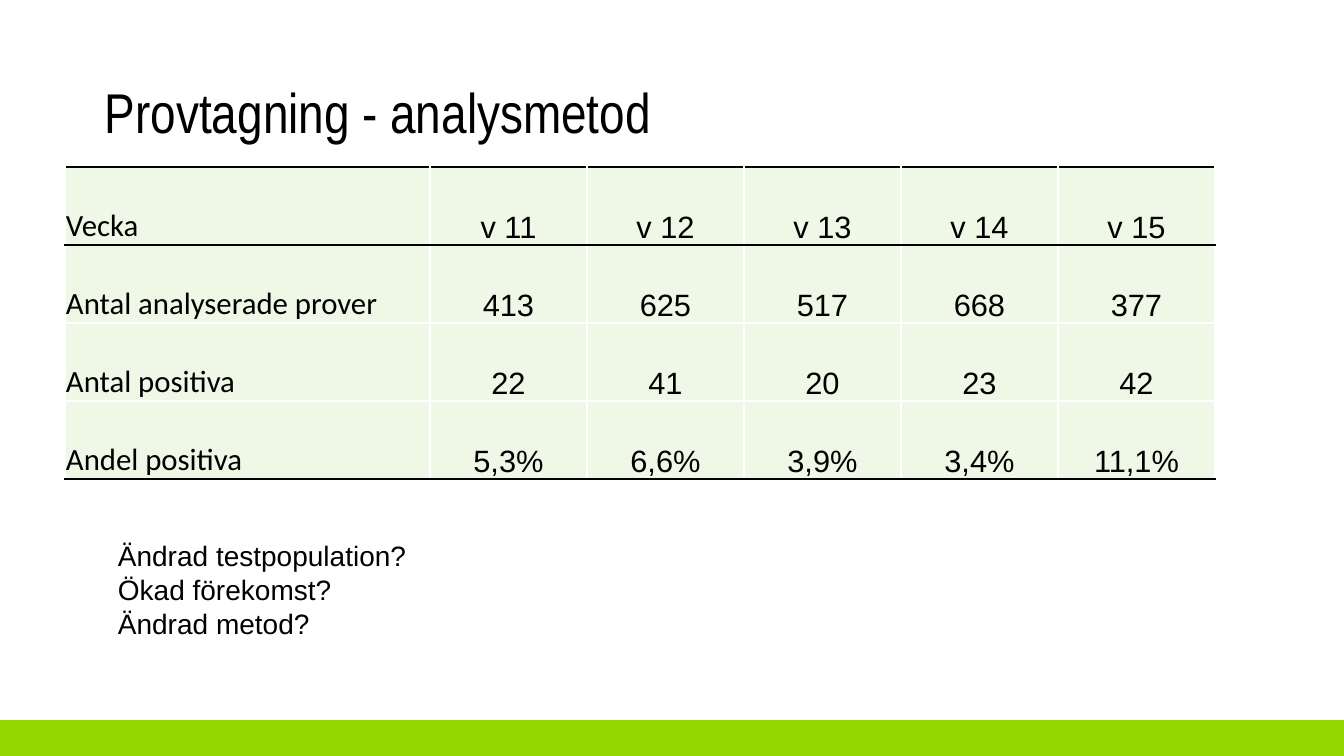
from dataclasses import dataclass

import pptx
import pptx.dml.color
import pptx.enum.shapes
import pptx.enum.text
import pptx.oxml
import pptx.oxml.ns
import pptx.util

PX_PER_INCH = 100.8
COLORS = {"text": "000000", "rule": "000000", "grid": "FFFFFF",
          "cell": "EFF8E7", "footer": "97D700"}
ALIGN = pptx.enum.text.PP_ALIGN
ANCHOR = pptx.enum.text.MSO_ANCHOR


@dataclass(frozen=True)
class Box:
    left: int
    top: int
    width: int
    height: int


@dataclass(frozen=True)
class Measure:
    label: str
    values: tuple[str, ...]
    top_line: str
    bottom_line: str


MEASURES = [
    Measure("Vecka", ("v 11", "v 12", "v 13", "v 14", "v 15"), "rule", "rule"),
    Measure("Antal analyserade prover", ("413", "625", "517", "668", "377"), "rule", "grid"),
    Measure("Antal positiva", ("22", "41", "20", "23", "42"), "grid", "grid"),
    Measure("Andel positiva", ("5,3%", "6,6%", "3,9%", "3,4%", "11,1%"), "grid", "rule"),
]
QUESTIONS = "Ändrad testpopulation?\nÖkad förekomst?\nÄndrad metod?"


def px(length: int) -> pptx.util.Emu:
    return pptx.util.Emu(round(length * 914400 / PX_PER_INCH))


def emu(box: Box) -> tuple:
    return px(box.left), px(box.top), px(box.width), px(box.height)


def rgb(name: str) -> pptx.dml.color.RGBColor:
    return pptx.dml.color.RGBColor.from_string(COLORS[name])


def write(frame, text: str, *, size: int, font: str = "Arial",
          align=ALIGN.LEFT, spacing: float = 1.0) -> None:
    frame.word_wrap = True
    for index, line in enumerate(text.split("\n")):
        paragraph = frame.add_paragraph() if index else frame.paragraphs[0]
        paragraph.alignment = align
        paragraph.line_spacing = spacing
        run = paragraph.add_run()
        run.text = line
        run.font.size = pptx.util.Pt(size)
        run.font.name = font
        run.font.color.rgb = rgb("text")


def add_text(slide, box: Box, text: str, **text_format) -> None:
    write(slide.shapes.add_textbox(*emu(box)).text_frame, text, **text_format)


def add_border(cell, side: str, color: str) -> None:
    cell._tc.get_or_add_tcPr().append(pptx.oxml.parse_xml(
        f'<a:ln{side} {pptx.oxml.ns.nsdecls("a")} w="12700"><a:solidFill>'
        f'<a:srgbClr val="{COLORS[color]}"/></a:solidFill></a:ln{side}>'))


def fill_cell(cell, text: str, measure: Measure, **text_format) -> None:
    # Borders come before the fill in the cell properties
    for side, color in (("L", "grid"), ("R", "grid"),
                        ("T", measure.top_line), ("B", measure.bottom_line)):
        add_border(cell, side, color)
    cell.fill.solid()
    cell.fill.fore_color.rgb = rgb("cell")
    cell.vertical_anchor = ANCHOR.BOTTOM
    cell.margin_left = cell.margin_right = cell.margin_top = px(1)
    cell.margin_bottom = 0
    write(cell.text_frame, text, size=22, **text_format)


def add_measures(slide, box: Box, label_width: int) -> None:
    weeks = len(MEASURES[0].values)
    table = slide.shapes.add_table(len(MEASURES), weeks + 1, *emu(box)).table
    table.first_row = table.horz_banding = False
    for index, column in enumerate(table.columns):
        column.width = px((box.width - label_width) // weeks if index else label_width)
    for row, measure in enumerate(MEASURES):
        table.rows[row].height = px(box.height // len(MEASURES))
        fill_cell(table.cell(row, 0), measure.label, measure, font="Calibri")
        for column, value in enumerate(measure.values, start=1):
            fill_cell(table.cell(row, column), value, measure, align=ALIGN.CENTER)


def add_footer(slide, box: Box) -> None:
    band = slide.shapes.add_shape(pptx.enum.shapes.MSO_SHAPE.RECTANGLE, *emu(box))
    band.shadow.inherit = False
    band.fill.solid()
    band.fill.fore_color.rgb = rgb("footer")
    band.line.fill.background()


def main() -> None:
    deck = pptx.Presentation()
    deck.slide_width, deck.slide_height = px(1344), px(756)
    slide = deck.slides.add_slide(deck.slide_layouts[6])

    # Footer band and heading
    add_footer(slide, Box(0, 720, 1344, 36))
    add_text(slide, Box(95, 80, 1153, 72), "Provtagning - analysmetod",
             size=40, font="Arial Narrow", spacing=0.9)

    # Weekly test results and the questions they raise
    add_measures(slide, Box(65, 167, 1150, 312), label_width=365)
    add_text(slide, Box(108, 534, 678, 142), QUESTIONS, size=20)

    deck.save("out.pptx")


if __name__ == "__main__":
    main()
